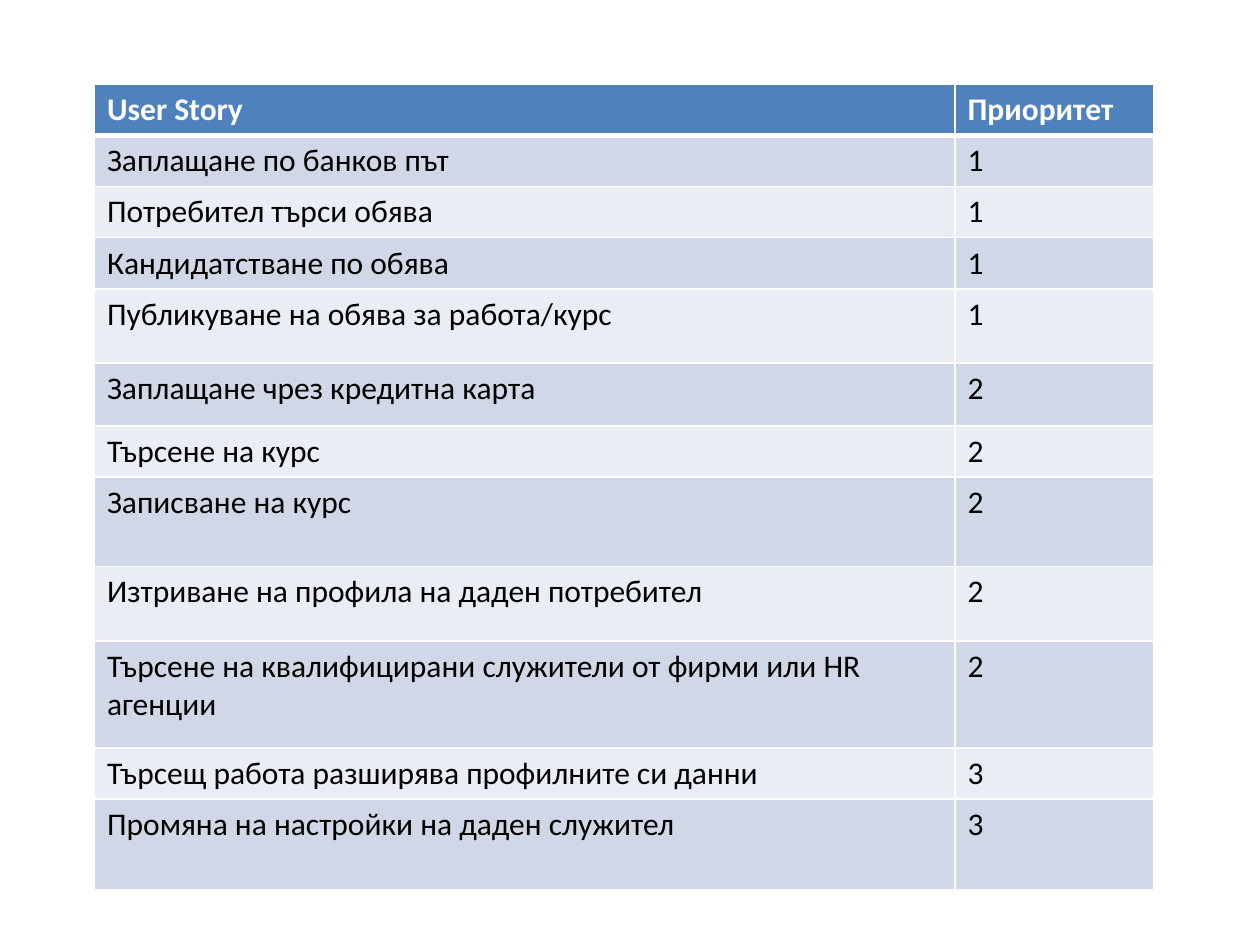
import pptx
import pptx.util
import pptx.dml.color
import pptx.oxml.ns
from dataclasses import dataclass
from lxml import etree

Inches = pptx.util.Inches
Pt = pptx.util.Pt


@dataclass(frozen=True)
class Theme:
    font: str = "Calibri"
    size: int = 18
    head: str = "4F81BD"
    bands: tuple = ("D0D8E8", "E9EDF4")
    white: str = "FFFFFF"
    ink: str = "000000"
    thin: int = 1
    thick: int = 3


def rgb(code):
    return pptx.dml.color.RGBColor.from_string(code)


class Deck:
    def __init__(self, theme):
        self.theme = theme
        self.prs = pptx.Presentation()
        self.prs.slide_width = Inches(10)
        self.prs.slide_height = Inches(7.5)
        self.slide = self.prs.slides.add_slide(self.prs.slide_layouts[6])

    def border(self, cell, sides):
        props = cell._tc.get_or_add_tcPr()
        qn = pptx.oxml.ns.qn
        for side, width in sides.items():
            line = etree.SubElement(props, qn(f"a:ln{side}"), w=str(Pt(width)))
            fill = etree.SubElement(line, qn("a:solidFill"))
            etree.SubElement(fill, qn("a:srgbClr"), val=self.theme.white)

    def cell(self, cell, text, row):
        theme = self.theme
        head = row == 0
        # Borders come before the fill in the cell properties
        self.border(cell, {
            "L": theme.thin,
            "R": theme.thin,
            "T": theme.thick if row == 1 else theme.thin,
            "B": theme.thick if head else theme.thin,
        })
        cell.fill.solid()
        cell.fill.fore_color.rgb = rgb(
            theme.head if head else theme.bands[(row - 1) % 2])
        run = cell.text_frame.paragraphs[0].add_run()
        run.text = text
        run.font.name = theme.font
        run.font.size = Pt(theme.size)
        run.font.bold = head
        run.font.color.rgb = rgb(theme.white if head else theme.ink)

    def table(self, left, top, widths, rows):
        heights = [height for height, *_ in rows]
        frame = self.slide.shapes.add_table(
            len(rows), len(widths), Inches(left), Inches(top),
            Inches(sum(widths)), Inches(sum(heights)))
        grid = frame.table
        for col, width in zip(grid.columns, widths):
            col.width = Inches(width)
        for i, (height, *texts) in enumerate(rows):
            grid.rows[i].height = Inches(height)
            for j, text in enumerate(texts):
                self.cell(grid.cell(i, j), text, i)


# Row height, story, priority
LOW = 0.4
STORIES = [
    (LOW, "User Story", "Приоритет"),
    (LOW, "Заплащане по банков път", "1"),
    (LOW, "Потребител търси обява", "1"),
    (LOW, "Кандидатстване по обява", "1"),
    (0.59, "Публикуване на обява за работа/курс", "1"),
    (0.5, "Заплащане чрез кредитна карта", "2"),
    (LOW, "Търсене на курс", "2"),
    (0.71, "Записване на курс", "2"),
    (0.59, "Изтриване на профила на даден потребител", "2"),
    (0.85, "Търсене на квалифицирани служители от фирми или HR агенции", "2"),
    (LOW, "Търсещ работа разширява профилните си данни", "3"),
    (0.72, "Промяна на настройки на даден служител", "3"),
]


def main():
    deck = Deck(Theme())
    # Table of stories by priority
    deck.table(0.75, 0.67, (6.83, 1.58), STORIES)
    deck.prs.save("out.pptx")


if __name__ == "__main__":
    main()
